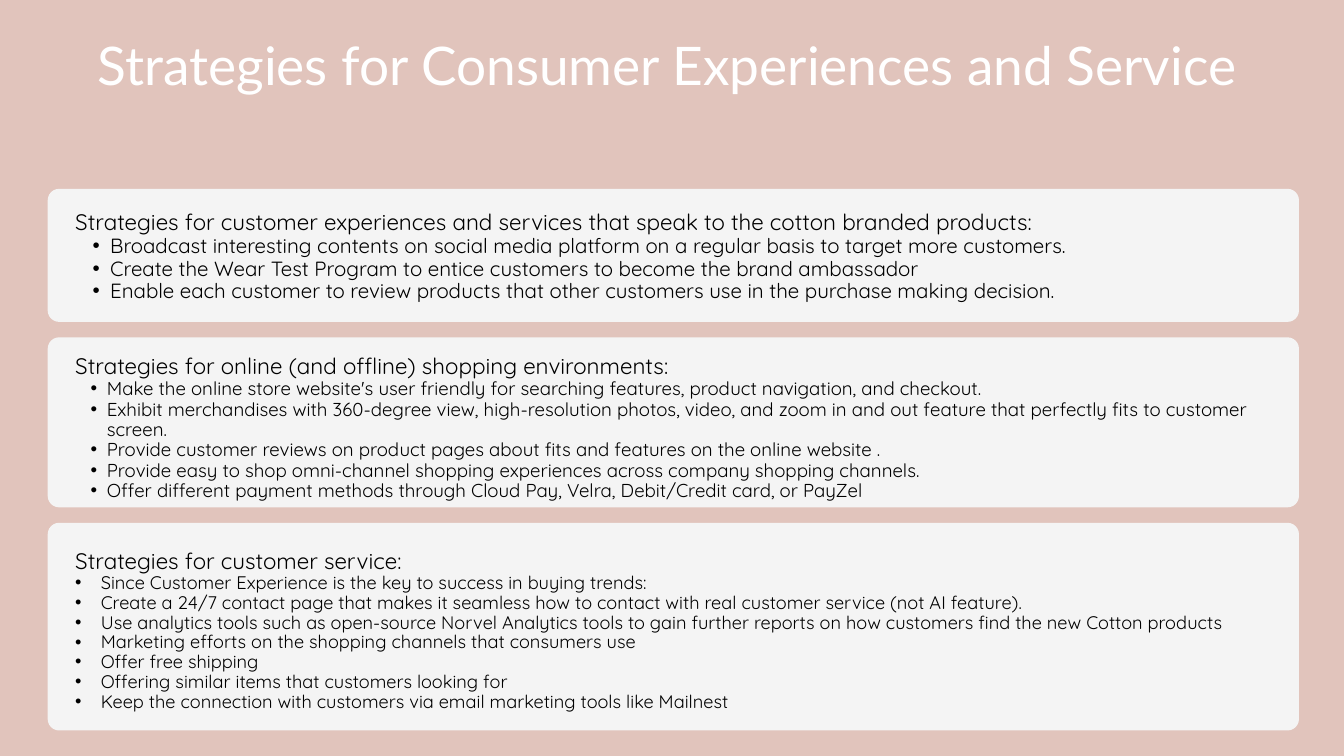
from dataclasses import dataclass

from lxml.etree import SubElement
from pptx import Presentation
from pptx.dml.color import RGBColor
from pptx.enum.shapes import MSO_SHAPE
from pptx.enum.text import MSO_ANCHOR, MSO_AUTO_SIZE, PP_ALIGN
from pptx.oxml.ns import qn
from pptx.util import Inches, Pt

COLUMNS, ROWS = 200, 112.5
UNIT = Inches(0.1)
CARD_LEFT, CARD_WIDTH, CARD_GAP, CORNER = 7.1, 186.2, 2.3, 1.7
TEXT_LEFT = 11.2
FIRST_CARD_TOP = 28.1


@dataclass
class Card:
    height: float
    text_offset: float
    text_width: float
    text_height: float
    heading: str
    bullets: list[str]
    size: float
    spacing: float
    margin: float
    hanging: float
    level: int = 1


CARDS = [
    Card(19.8, 3.3, 176, 13.6,
         "Strategies for customer experiences and services that speak to the cotton branded products:",
         ["Broadcast interesting contents on social media platform on a regular basis to target more customers.",
          "Create the Wear Test Program to entice customers to become the brand ambassador",
          "Enable each customer to review products that other customers use in the purchase making decision."],
         size=22, spacing=24, margin=5.2, hanging=2.6),
    Card(25.3, 2.6, 176, 25.2,
         "Strategies for online (and offline) shopping environments:",
         ["Make the online store website's user friendly for searching features, product navigation, and checkout.",
          "Exhibit merchandises with 360-degree view, high-resolution photos, video, and zoom in and out "
          "feature that perfectly fits to customer screen.",
          "Provide customer reviews on product pages about fits and features on the online website .",
          "Provide easy to shop omni-channel shopping experiences across company shopping channels.",
          "Offer different payment methods through Cloud Pay, Velra, Debit/Credit card, or PayZel"],
         size=20, spacing=21.8, margin=4.7, hanging=2.4),
    Card(30.9, 3.9, 185.7, 27.2,
         "Strategies for customer service:",
         ["Since Customer Experience is the key to success in buying trends:",
          "Create a 24/7 contact page that makes it seamless how to contact with real customer service "
          "(not AI feature).",
          "Use analytics tools such as open-source Norvel Analytics tools to gain further reports on how "
          "customers find the new Cotton products",
          "Marketing efforts on the shopping channels that consumers use",
          "Offer free shipping",
          "Offering similar items that customers looking for",
          "Keep the connection with customers via email marketing tools like Mailnest"],
         size=19.5, spacing=21.2, margin=3.8, hanging=3.8, level=0),
]


def grid(cells: float) -> int:
    return round(cells * UNIT)


def paint(fill, color: str) -> None:
    fill.solid()
    fill.fore_color.rgb = RGBColor.from_string(color)


def prepare_frame(frame) -> None:
    frame.auto_size = MSO_AUTO_SIZE.NONE
    frame.word_wrap = True
    frame.vertical_anchor = MSO_ANCHOR.TOP
    frame.margin_left = frame.margin_right = frame.margin_top = frame.margin_bottom = 0


def write(para, text: str, *, size: float, spacing: float, font: str = "Quicksand",
          color: str = "000000", align=PP_ALIGN.LEFT, level: int = 0,
          margin: float = 0, hanging: float = 0) -> None:
    para.alignment = align
    para.level = level
    para.line_spacing = Pt(spacing)
    para.space_before = para.space_after = Pt(0)
    span = para.add_run()
    span.text = text
    span.font.size = Pt(size)
    span.font.name = font
    paint(span.font.fill, color)
    if hanging:
        properties = para._p.get_or_add_pPr()
        properties.set("marL", str(grid(margin)))
        properties.set("indent", str(-grid(hanging)))
        SubElement(properties, qn("a:buFont"), typeface="Arial")
        SubElement(properties, qn("a:buChar"), char="•")


def add_title(page, text: str) -> None:
    title = page.shapes.title
    title.left, title.top = grid(5.8), grid(6.4)
    title.width, title.height = grid(186.9), grid(16.8)
    prepare_frame(title.text_frame)
    write(title.text_frame.paragraphs[0], text, size=57, spacing=57,
          font="Lato", color="FFFFFF", align=PP_ALIGN.CENTER)


def add_card(page, card: Card, top: float) -> None:
    panel = page.shapes.add_shape(MSO_SHAPE.ROUNDED_RECTANGLE, grid(CARD_LEFT), grid(top),
                                  grid(CARD_WIDTH), grid(card.height))
    panel.adjustments[0] = CORNER / card.height
    panel.shadow.inherit = False
    panel.line.fill.background()
    paint(panel.fill, "F4F4F4")

    box = page.shapes.add_textbox(grid(TEXT_LEFT), grid(top + card.text_offset),
                                  grid(card.text_width), grid(card.text_height))
    frame = box.text_frame
    prepare_frame(frame)
    write(frame.paragraphs[0], card.heading, size=24, spacing=26.2)
    for bullet in card.bullets:
        write(frame.add_paragraph(), bullet, size=card.size, spacing=card.spacing,
              level=card.level, margin=card.margin, hanging=card.hanging)


def main() -> None:
    deck = Presentation()
    deck.slide_width, deck.slide_height = grid(COLUMNS), grid(ROWS)
    page = deck.slides.add_slide(deck.slide_layouts[5])
    paint(page.background.fill, "E1C4BC")
    add_title(page, "Strategies for Consumer Experiences and Service")
    top = FIRST_CARD_TOP
    for card in CARDS:
        add_card(page, card, top)
        top += card.height + CARD_GAP
    deck.save("out.pptx")


if __name__ == "__main__":
    main()
